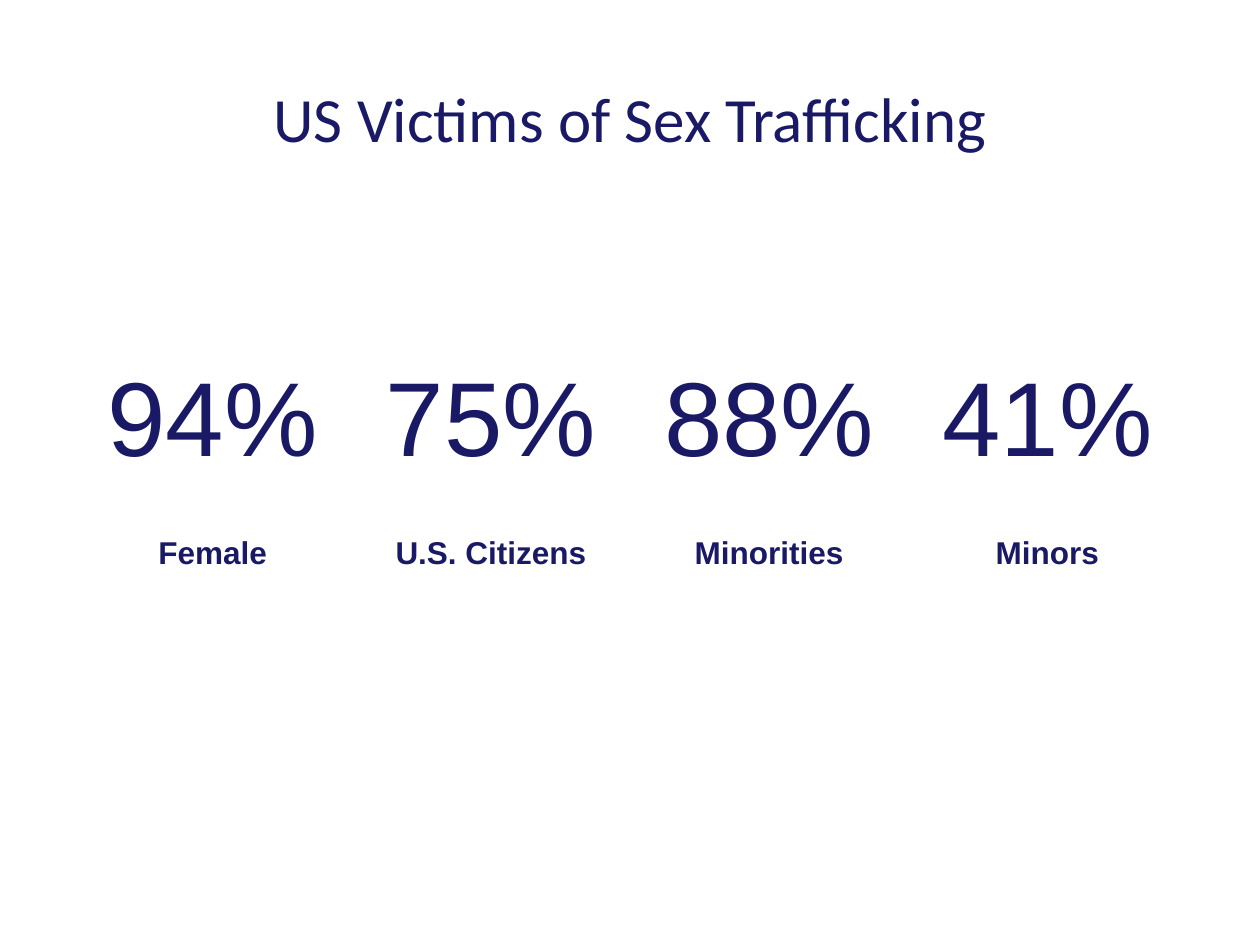
from pptx import Presentation
from pptx.dml.color import RGBColor
from pptx.enum.text import MSO_ANCHOR, PP_ALIGN
from pptx.util import Pt

CENTER = PP_ALIGN.CENTER
TOP, MIDDLE = MSO_ANCHOR.TOP, MSO_ANCHOR.MIDDLE
TITLE_ONLY = 5

STATS = [
    ("94%", "Female"),
    ("75%", "U.S. Citizens"),
    ("88%", "Minorities"),
    ("41%", "Minors"),
]


def color(code):
    return RGBColor.from_string(code)


class Deck:
    ink = "191966"
    head = "Calibri"
    body = "Arial"

    def __init__(self, wide, high):
        self.prs = Presentation()
        self.prs.slide_width, self.prs.slide_height = Pt(wide), Pt(high)
        self.slide = self.prs.slides.add_slide(
            self.prs.slide_layouts[TITLE_ONLY])

    def add_text(self, para, text, face, size, bold, space):
        para.alignment = CENTER
        para.line_spacing = space
        run = para.add_run()
        run.text = text
        font = run.font
        font.name, font.size, font.bold = face, Pt(size), bold
        font.color.rgb = color(self.ink)

    def title(self, text, left, top, wide, high):
        box = self.slide.shapes.title
        box.left, box.top = Pt(left), Pt(top)
        box.width, box.height = Pt(wide), Pt(high)
        frame = box.text_frame
        frame.margin_left = frame.margin_right = 0
        frame.margin_top = frame.margin_bottom = 0
        frame.vertical_anchor = MIDDLE
        frame.word_wrap = True
        self.add_text(frame.paragraphs[0], text, self.head, 36, False, 1.02)

    def table(self, rows, left, top, wide, styles):
        """Draw an unfilled table; styles give height, size, bold per row."""
        high = sum(style[0] for style in styles)
        grid = self.slide.shapes.add_table(
            len(rows), len(rows[0]), Pt(left), Pt(top), Pt(wide), Pt(high)
        ).table
        grid.first_row = grid.horz_banding = False
        for line, texts, (tall, size, bold) in zip(grid.rows, rows, styles):
            line.height = Pt(tall)
            for cell, text in zip(line.cells, texts):
                cell.fill.background()
                cell.vertical_anchor = TOP
                cell.margin_left = cell.margin_right = Pt(18)
                cell.margin_top = cell.margin_bottom = Pt(7.2)
                self.add_text(cell.text_frame.paragraphs[0], text,
                              self.body, size, bold, 0.93)


def main():
    deck = Deck(720, 540)
    deck.title("US Victims of Sex Trafficking", 36, 21.6, 648, 90)
    deck.table(list(zip(*STATS)), 42, 204, 636,
               [(96.5, 60, False), (35.5, 18, True)])
    deck.prs.save("out.pptx")


if __name__ == "__main__":
    main()
